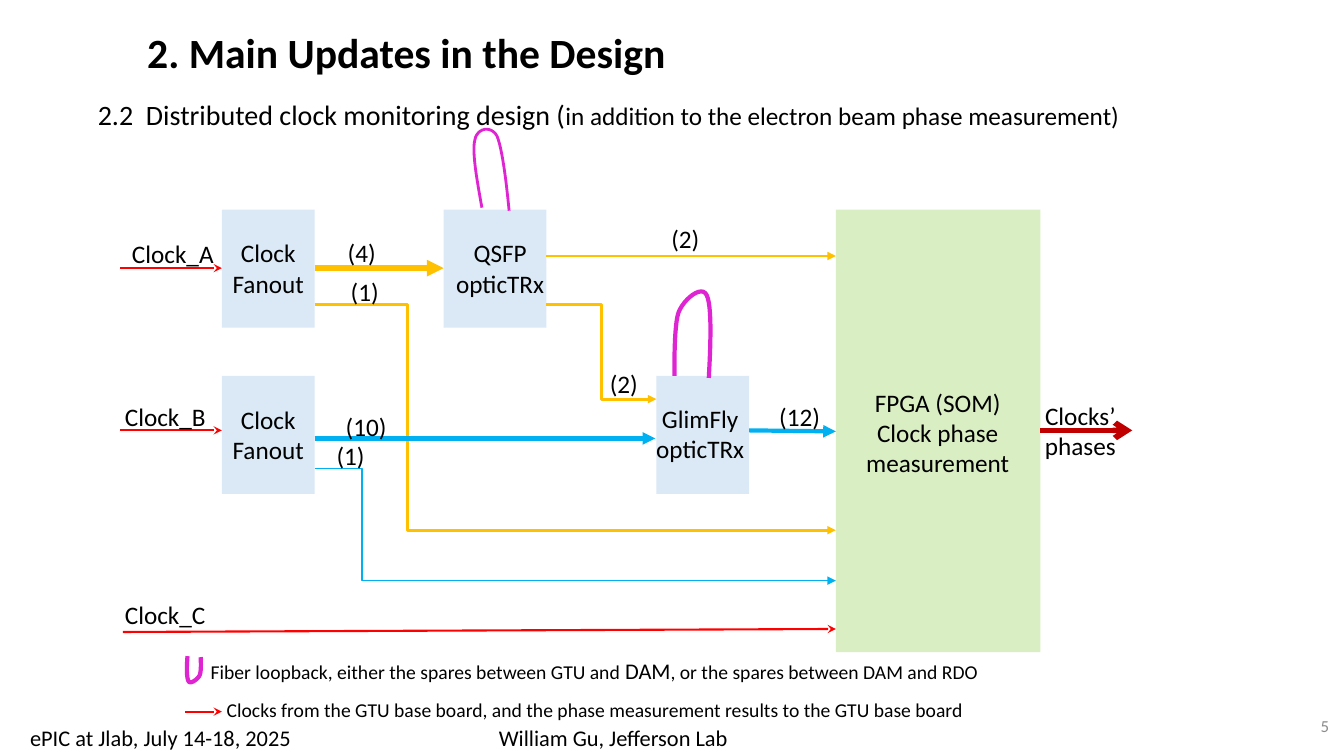
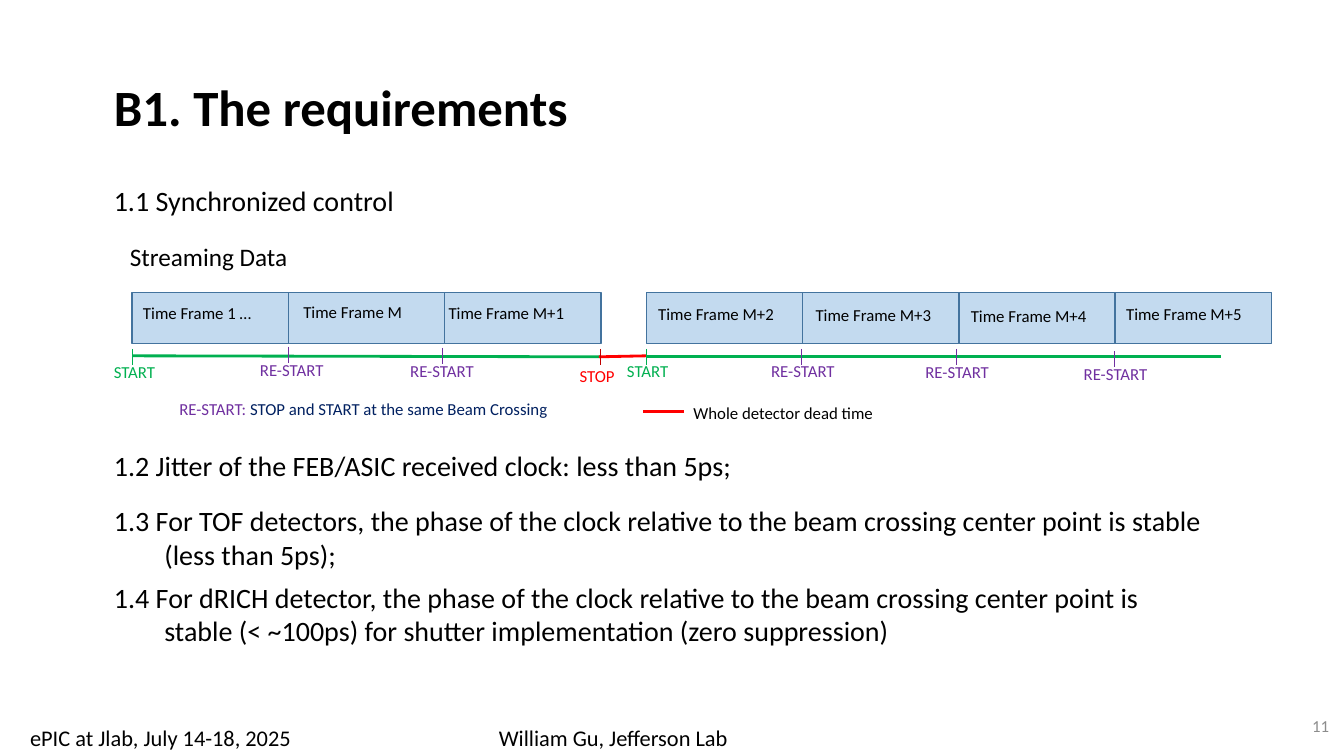
from typing import NamedTuple

import lxml.etree
import pptx
import pptx.dml.color
import pptx.enum.shapes
import pptx.enum.text
import pptx.oxml.ns
import pptx.presentation
import pptx.shapes.autoshape
import pptx.slide
import pptx.text.text
import pptx.util

Inches = pptx.util.Inches
RGBColor = pptx.dml.color.RGBColor
Align = pptx.enum.text.PP_ALIGN
qn = pptx.oxml.ns.qn

BLACK = RGBColor(0x00, 0x00, 0x00)
GRAY = RGBColor(0x8C, 0x8C, 0x8C)
RED = RGBColor(0xFF, 0x00, 0x00)
DARK_RED = RGBColor(0xC0, 0x00, 0x00)
BLUE = RGBColor(0x5B, 0x9B, 0xD5)
BORDER_BLUE = RGBColor(0x43, 0x73, 0x9E)
SKY = RGBColor(0x00, 0xB0, 0xF0)
NAVY = RGBColor(0x00, 0x20, 0x60)
AMBER = RGBColor(0xFF, 0xC0, 0x00)
LIME = RGBColor(0x92, 0xD0, 0x50)
GREEN = RGBColor(0x00, 0xB0, 0x50)
PURPLE = RGBColor(0x70, 0x30, 0xA0)
MAGENTA = RGBColor(0xDF, 0x25, 0xD2)

FONT = "Calibri"
BODY_SIZE = 20
FRAME_PITCH = 1.55
CURVE_STEPS = 12

Point = tuple[float, float]


class Run(NamedTuple):
    text: str
    size: float = 18
    color: RGBColor = BLACK
    bold: bool = False


class Label(NamedTuple):
    """Line breaks in the text start paragraphs; more_runs continue the last one."""
    text: str
    left: float
    top: float
    width: float
    size: float = 18
    color: RGBColor = BLACK
    lines: int = 1
    wrap: bool = False
    align: Align = Align.LEFT
    more_runs: tuple[Run, ...] = ()


class Box(NamedTuple):
    left: float
    top: float
    width: float
    height: float
    color: RGBColor
    opacity: int
    border: RGBColor | None = None


class Line(NamedTuple):
    """An elbow is the fraction of the width at which the line turns."""
    start: Point
    end: Point
    color: RGBColor
    width: float
    head: str = ""
    elbow: float | None = None


class Loop(NamedTuple):
    """Each curve holds two control points and an end point."""
    start: Point
    curves: tuple[tuple[Point, Point, Point], ...]
    width: float


class Event(NamedTuple):
    tick: Point
    text: str
    label: Point
    color: RGBColor


class Item(NamedTuple):
    runs: tuple[Run, ...]
    space_before: float = 0


def add_run(paragraph: pptx.text.text._Paragraph, source: Run) -> None:
    run = paragraph.add_run()
    run.text = source.text
    font_format = {"name": FONT, "size": pptx.util.Pt(source.size), "bold": source.bold}
    for name, value in font_format.items():
        setattr(run.font, name, value)
    run.font.color.rgb = source.color


def add_label(slide: pptx.slide.Slide, label: Label) -> pptx.shapes.autoshape.Shape:
    height = label.lines * label.size * 1.2 / 72 + 0.1
    shape = slide.shapes.add_textbox(
        Inches(label.left), Inches(label.top), Inches(label.width), Inches(height))
    frame = shape.text_frame
    frame.word_wrap = label.wrap
    frame.auto_size = pptx.enum.text.MSO_AUTO_SIZE.SHAPE_TO_FIT_TEXT
    for index, text in enumerate(label.text.split("\n")):
        paragraph = frame.add_paragraph() if index else frame.paragraphs[0]
        paragraph.alignment = label.align
        add_run(paragraph, Run(text, label.size, label.color))
    for run in label.more_runs:
        add_run(frame.paragraphs[-1], run)
    return shape


def add_box(slide: pptx.slide.Slide, box: Box) -> None:
    shape = slide.shapes.add_shape(
        pptx.enum.shapes.MSO_SHAPE.RECTANGLE, *(Inches(value) for value in box[:4]))
    shape.shadow.inherit = False
    shape.fill.solid()
    shape.fill.fore_color.rgb = box.color
    color = shape.element.spPr.find(".//" + qn("a:srgbClr"))
    lxml.etree.SubElement(color, qn("a:alpha"), val=str(box.opacity * 1000))
    if box.border is None:
        shape.line.fill.background()
    else:
        shape.line.color.rgb = box.border
        shape.line.width = pptx.util.Pt(1)


def add_line(slide: pptx.slide.Slide, line: Line) -> None:
    kinds = pptx.enum.shapes.MSO_CONNECTOR
    kind = kinds.STRAIGHT if line.elbow is None else kinds.ELBOW
    connector = slide.shapes.add_connector(
        kind, *(Inches(value) for value in line.start + line.end))
    connector.line.color.rgb = line.color
    connector.line.width = pptx.util.Pt(line.width)
    properties = connector.element.spPr
    if line.head:
        lxml.etree.SubElement(properties.find(qn("a:ln")), qn("a:tailEnd"), type=line.head)
    if line.elbow is not None:
        geometry = properties.find(qn("a:prstGeom"))
        guides = geometry.find(qn("a:avLst"))
        if guides is None:
            guides = lxml.etree.SubElement(geometry, qn("a:avLst"))
        lxml.etree.SubElement(
            guides, qn("a:gd"), name="adj1", fmla=f"val {round(line.elbow * 100000)}")
    lxml.etree.SubElement(properties, qn("a:effectLst"))


def curve_point(points: tuple[Point, ...], t: float) -> Point:
    """Point at t on a cubic Bézier curve."""
    weights = ((1 - t) ** 3, 3 * t * (1 - t) ** 2, 3 * t * t * (1 - t), t ** 3)
    x, y = (sum(w * p[axis] for w, p in zip(weights, points)) for axis in (0, 1))
    return x, y


def add_loop(slide: pptx.slide.Slide, loop: Loop) -> None:
    start, outline = loop.start, []
    for curve in loop.curves:
        outline += [curve_point((start, *curve), step / CURVE_STEPS)
                    for step in range(1, CURVE_STEPS + 1)]
        start = curve[-1]
    builder = slide.shapes.build_freeform(Inches(loop.start[0]), Inches(loop.start[1]))
    builder.add_line_segments([(Inches(x), Inches(y)) for x, y in outline], close=False)
    shape = builder.convert_to_shape()
    shape.shadow.inherit = False
    shape.fill.background()
    shape.line.color.rgb = MAGENTA
    shape.line.width = pptx.util.Pt(loop.width)


def place(shape: pptx.shapes.autoshape.Shape, bounds: tuple[float, ...]) -> None:
    for name, value in zip(("left", "top", "width", "height"), bounds):
        setattr(shape, name, Inches(value))
    frame_format = {"word_wrap": True, "auto_size": pptx.enum.text.MSO_AUTO_SIZE.NONE,
                    "vertical_anchor": pptx.enum.text.MSO_ANCHOR.TOP}
    for name, value in frame_format.items():
        setattr(shape.text_frame, name, value)


def set_title(slide: pptx.slide.Slide, run: Run, bounds: tuple[float, ...]) -> None:
    place(slide.shapes.title, bounds)
    paragraph = slide.shapes.title.text_frame.paragraphs[0]
    paragraph.alignment = Align.LEFT
    paragraph.line_spacing = 0.8
    add_run(paragraph, run)


def set_body(slide: pptx.slide.Slide, items: tuple[Item, ...],
             bounds: tuple[float, ...]) -> None:
    """Fill the body with unbulleted items that hang by half an inch."""
    body = slide.placeholders[1]
    place(body, bounds)
    for index, item in enumerate(items):
        frame = body.text_frame
        paragraph = frame.add_paragraph() if index else frame.paragraphs[0]
        properties = paragraph._p.get_or_add_pPr()
        properties.set("marL", str(Inches(0.5)))
        properties.set("indent", str(Inches(-0.5)))
        lxml.etree.SubElement(properties, qn("a:buNone"))
        paragraph.space_before = pptx.util.Pt(item.space_before)
        paragraph.space_after = pptx.util.Pt(0)
        for run in item.runs:
            add_run(paragraph, run)


def add_page_number(slide: pptx.slide.Slide, number: str) -> None:
    add_label(slide, Label(number, 10.28, 7.05, 3, 12, GRAY, wrap=True, align=Align.RIGHT))


def add_layout_footers(slide: pptx.slide.Slide) -> None:
    """Draw the footers and move them to the layout that all slides share."""
    footers = (Label("ePIC at Jlab, July 14-18, 2025", 0.2, 7.13, 2.82, 16),
               Label("William Gu, Jefferson Lab", 4.85, 7.13, 2.5, 16))
    for identifier, footer in enumerate(footers, start=20):
        element = add_label(slide, footer).element
        element.find(".//" + qn("p:cNvPr")).set("id", str(identifier))
        slide.slide_layout.shapes.element.append(element)


def draw_clock_monitoring(slide: pptx.slide.Slide) -> None:
    set_title(slide, Run("2. Main Updates in the Design", 29.7, bold=True),
              (1.36, 0.31, 5.6, 0.53))
    set_body(slide, (Item((
        Run("2.2  Distributed clock monitoring design (", BODY_SIZE),
        Run("in addition to the electron beam phase measurement)"))),),
        (0.87, 0.92, 10.49, 0.44))
    blocks = ((2.2, 2.08, 0.92), (2.2, 3.73, 0.92), (4.4, 2.08, 1.02), (6.51, 3.73, 0.92))
    for left, top, width in blocks:
        add_box(slide, Box(left, top, width, 1.17, BLUE, 22))
    add_box(slide, Box(8.29, 2.08, 2.03, 4.39, LIME, 34))

    for line in (
        Line((1.19, 2.66), (2.2, 2.66), RED, 1.5, "stealth"),
        Line((1.19, 4.27), (2.2, 4.27), RED, 1.5, "stealth"),
        Line((1.22, 6.27), (8.29, 6.24), RED, 1.5, "stealth"),
        Line((1.84, 7.06), (2.2, 7.06), RED, 1.5, "stealth"),
        Line((3.12, 2.66), (4.4, 2.66), AMBER, 4, "triangle"),
        Line((5.42, 2.54), (8.29, 2.54), AMBER, 2, "triangle"),
        Line((5.42, 3.02), (6.51, 3.96), AMBER, 2, "triangle", 0.5),
        Line((3.12, 3.02), (8.29, 5.26), AMBER, 2, "triangle", 0.178),
        Line((3.12, 4.35), (6.5, 4.35), SKY, 3, "triangle"),
        Line((7.43, 4.27), (8.29, 4.28), SKY, 3, "triangle"),
        Line((3.12, 4.65), (8.29, 5.76), SKY, 1, "triangle", 0.091),
        Line((10.32, 4.27), (11.23, 4.27), DARK_RED, 4, "arrow"),
    ):
        add_line(slide, line)

    for loop in (
        Loop((4.78, 2.06), (((4.73, 1.78), (4.68, 1.5), (4.71, 1.39)),
                            ((4.73, 1.27), (4.87, 1.24), (4.93, 1.35)),
                            ((4.98, 1.47), (5.02, 1.78), (5.05, 2.09))), 2),
        Loop((7.03, 3.75), (((7.05, 3.39), (7.06, 3.04), (7.01, 2.93)),
                            ((6.96, 2.82), (6.78, 2.97), (6.73, 3.1)),
                            ((6.68, 3.24), (6.69, 3.73), (6.69, 3.73))), 3),
        Loop((1.86, 6.51), (((1.85, 6.62), (1.85, 6.72), (1.87, 6.76)),
                            ((1.89, 6.79), (1.96, 6.74), (1.98, 6.7)),
                            ((2.0, 6.66), (1.99, 6.52), (1.99, 6.52))), 3),
    ):
        add_loop(slide, loop)

    for text, left, top, width, lines in (
        ("Clock\nFanout", 2.2, 2.31, 0.92, 2), ("Clock\nFanout", 2.2, 3.96, 0.92, 2),
        ("QSFP opticTRx", 4.4, 2.31, 1.12, 2), ("GlimFly opticTRx", 6.31, 3.95, 1.27, 2),
        ("FPGA (SOM)\nClock phase measurement", 8.44, 3.79, 1.72, 3),
        ("Clocks’ phases", 10.2, 3.92, 1.03, 2),
    ):
        add_label(slide, Label(text, left, top, width, lines=lines,
                               wrap=text != "Clock\nFanout", align=Align.CENTER))
    for label in (
        Label("Clock_A", 1.21, 2.32, 1.02), Label("Clock_B", 1.14, 3.93, 1.01),
        Label("Clock_C", 1.14, 5.9, 1.01), Label("(4)", 3.35, 2.31, 0.48),
        Label("(10)", 3.33, 4.03, 0.61), Label("(1)", 3.38, 2.69, 0.48),
        Label("(2)", 5.95, 3.61, 0.48), Label("(2)", 6.56, 2.17, 0.48),
        Label("(1)", 3.24, 4.32, 0.48), Label("(12)", 7.63, 3.93, 0.61),
        Label("Fiber loopback, either the spares between GTU and ", 1.99, 6.47, 7.88, 14,
              more_runs=(Run("DAM", 16), Run(", or the spares between DAM and RDO", 14))),
        Label("Clocks from the GTU base board, and the phase measurement results "
              "to the GTU base board", 2.15, 6.87, 7.58, 14),
    ):
        add_label(slide, label)
    add_page_number(slide, "5")


def draw_requirements(slide: pptx.slide.Slide) -> None:
    set_title(slide, Run("B1. The requirements", 36.3, bold=True), (1.03, 0.82, 4.8, 0.53))
    set_body(slide, (
        Item((Run("1.2 Jitter of the FEB/ASIC received clock: less than 5ps;", BODY_SIZE),)),
        Item((Run("1.3 For TOF detectors, the phase of the clock relative to the beam crossing "
                  "center point is stable (less than 5ps);", BODY_SIZE),), 15.5),
        Item((Run("1.4 For dRICH detector, the phase of the clock relative to the beam crossing "
                  "center point is stable (< ~100ps) for shutter implementation "
                  "(zero suppression)", BODY_SIZE),), 6.5),
    ), (1.03, 4.4, 11.08, 2.08))

    for first_left, count in ((1.31, 3), (6.41, 4)):
        for index in range(count):
            add_box(slide, Box(first_left + index * FRAME_PITCH, 2.9, FRAME_PITCH, 0.51,
                               BLUE, 36, BORDER_BLUE))
    for number, left, top, width in (
        ("1 …", 1.32, 2.95, 1.46), ("M", 2.91, 2.94, 1.29), ("M+1", 4.35, 2.95, 1.48),
        ("M+2", 6.43, 2.96, 1.48), ("M+3", 7.99, 2.97, 1.48), ("M+4", 9.53, 2.98, 1.48),
        ("M+5", 11.07, 2.96, 1.48),
    ):
        add_label(slide, Label(f"Time Frame {number}", left, top, width, 12))

    for line in (Line((1.31, 3.53), (5.95, 3.54), GREEN, 2),
                 Line((6.41, 3.54), (12.11, 3.54), GREEN, 2),
                 Line((5.94, 3.54), (6.41, 3.53), RED, 2),
                 Line((6.38, 4.08), (6.78, 4.08), RED, 2)):
        add_line(slide, line)
    label_widths = {"START": 0.62, "RE-START": 0.84, "STOP": 0.56}
    for event in (
        Event((1.31, 3.46), "START", (1.03, 3.54), GREEN),
        Event((2.86, 3.44), "RE-START", (2.48, 3.52), PURPLE),
        Event((4.39, 3.45), "RE-START", (3.97, 3.53), PURPLE),
        Event((5.95, 3.46), "STOP", (5.65, 3.58), RED),
        Event((6.41, 3.46), "START", (6.12, 3.53), GREEN),
        Event((7.95, 3.46), "RE-START", (7.55, 3.53), PURPLE),
        Event((9.49, 3.46), "RE-START", (9.08, 3.54), PURPLE),
        Event((11.05, 3.48), "RE-START", (10.65, 3.56), PURPLE),
    ):
        x, y = event.tick
        tick_color = DARK_RED if event.text == "STOP" else event.color
        add_line(slide, Line((x, y), (x, y + 0.16), tick_color, 0.5))
        add_label(slide, Label(event.text, *event.label, label_widths[event.text],
                               12, event.color))
    for label in (
        Label("1.1 Synchronized control", 1.03, 1.77, 3.29, BODY_SIZE),
        Label("Streaming Data", 1.19, 2.34, 1.78),
        Label("RE-START: ", 1.68, 3.91, 3.9, 12, PURPLE, more_runs=(
            Run("STOP and START at the same Beam Crossing", 12, NAVY),)),
        Label("Whole detector dead time", 6.78, 3.95, 2, 12),
    ):
        add_label(slide, label)
    add_page_number(slide, "11")


def main() -> None:
    presentation = pptx.Presentation()
    presentation.slide_width = Inches(13.33)
    presentation.slide_height = Inches(7.5)
    layout = presentation.slide_layouts[1]
    slides = [presentation.slides.add_slide(layout) for _ in range(2)]
    add_layout_footers(slides[0])
    draw_clock_monitoring(slides[0])
    draw_requirements(slides[1])
    presentation.save("out.pptx")


if __name__ == "__main__":
    main()
